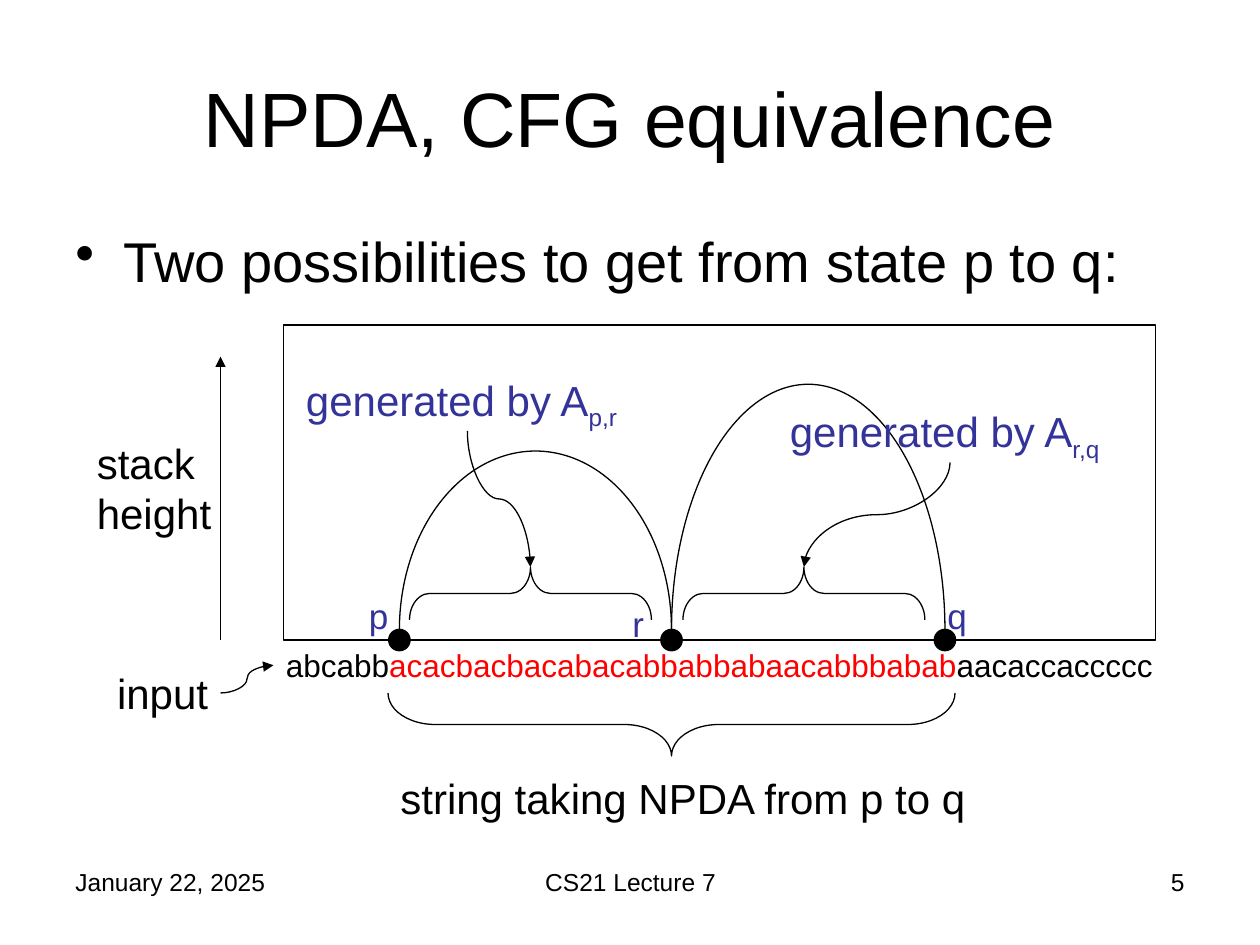
"""Build a slide on the equivalence of NPDAs and CFGs."""
from dataclasses import dataclass

from lxml import etree
from pptx import Presentation
from pptx.dml.color import RGBColor
from pptx.enum.shapes import MSO_CONNECTOR, MSO_SHAPE
from pptx.enum.text import MSO_ANCHOR, PP_ALIGN
from pptx.oxml.ns import qn
from pptx.util import Inches, Pt

STRAIGHT, CURVE = MSO_CONNECTOR.STRAIGHT, MSO_CONNECTOR.CURVE
RECTANGLE, OVAL = MSO_SHAPE.RECTANGLE, MSO_SHAPE.OVAL
ARC, BRACE = MSO_SHAPE.ARC, MSO_SHAPE.LEFT_BRACE
LEFT, CENTER, RIGHT = PP_ALIGN.LEFT, PP_ALIGN.CENTER, PP_ALIGN.RIGHT
TOP, MIDDLE = MSO_ANCHOR.TOP, MSO_ANCHOR.MIDDLE


@dataclass(frozen=True)
class Theme:
    """Colours, font and type sizes."""
    ink: RGBColor = RGBColor(0, 0, 0)
    accent: RGBColor = RGBColor(0x33, 0x33, 0x99)
    highlight: RGBColor = RGBColor(0xFF, 0, 0)
    font: str = "Arial"
    title: int = 44
    body: int = 32
    label: int = 24
    state: int = 20
    string: int = 18
    footer: int = 14
    line: float = 0.75


THEME = Theme()


@dataclass(frozen=True)
class Run:
    """A stretch of text with one look."""
    text: str
    color: RGBColor = THEME.ink
    subscript: bool = False


@dataclass(frozen=True)
class Label:
    """A text box in inches."""
    box: tuple[float, float, float, float]
    size: int
    runs: tuple[Run, ...]
    align: PP_ALIGN = LEFT
    anchor: MSO_ANCHOR = TOP
    bullet: bool = False


@dataclass(frozen=True)
class Outline:
    """A preset shape in inches."""
    kind: MSO_SHAPE
    box: tuple[float, float, float, float]
    filled: bool = False
    rotation: float = 0
    adjustments: tuple[float, ...] = ()


@dataclass(frozen=True)
class Arrow:
    """An arrow between two points; an upright curve leaves vertically."""
    start: tuple[float, float]
    end: tuple[float, float]
    kind: MSO_CONNECTOR = CURVE
    upright: bool = False


BASELINE = 5.08
STATES = (3.17, 5.33, 7.5)
DOT = 0.17
ARC_HEIGHTS = (1.42, 1.95)
FOOTER_TOP, FOOTER_HEIGHT = 6.83, 0.52


def generated_by(left: float, top: float, pair: str) -> Label:
    """Describe the label naming the variable that generates a segment."""
    runs = (Run("generated by A", THEME.accent), Run(pair, THEME.accent, True))
    return Label((left, top, 2.75, 0.5), THEME.label, runs)


def state(left: float, top: float, name: str) -> Label:
    """Describe the label of a state."""
    return Label((left, top, 0.42, 0.43), THEME.state, (Run(name, THEME.accent),))


def upright_brace(center: float, middle: float, width: float, height: float,
                  rotation: float, curl: float) -> Outline:
    """Describe a brace turned to lie along the input."""
    box = (center - height / 2, middle - width / 2, height, width)
    return Outline(BRACE, box, rotation=rotation, adjustments=(curl, 0.5))


LABELS = (
    Label((0.5, FOOTER_TOP, 2.33, FOOTER_HEIGHT), THEME.footer, (Run("January 22, 2025"),)),
    Label((3.42, FOOTER_TOP, 3.17, FOOTER_HEIGHT), THEME.footer,
          (Run("CS21 Lecture 7"),), CENTER),
    Label((7.17, FOOTER_TOP, 2.33, FOOTER_HEIGHT), THEME.footer, (Run("5"),), RIGHT),
    Label((0.5, 0.3, 9, 1.25), THEME.title, (Run("NPDA, CFG equivalence"),), CENTER, MIDDLE),
    Label((0.5, 1.75, 9, 0.75), THEME.body,
          (Run("Two possibilities to get from state p to q:"),), bullet=True),
    Label((0.67, 3.42, 1.33, 0.9), THEME.label, (Run("stack height"),)),
    Label((2.17, BASELINE, 7.25, 0.4), THEME.string,
          (Run("abcabb"), Run("acacbacbacabacabbabbabaacabbbabab", THEME.highlight),
           Run("aacaccaccccc"))),
    Label((0.75, 5.25, 1, 0.5), THEME.label, (Run("input"),), RIGHT),
    Label((3.08, 6.08, 4.83, 0.5), THEME.label, (Run("string taking NPDA from p to q"),)),
    state(2.83, 4.67, "p"),
    state(7.42, 4.67, "q"),
    state(4.92, 4.73, "r"),
    generated_by(2.33, 2.92, "p,r"),
    generated_by(6.17, 3.17, "r,q"),
)

OUTLINES = (
    Outline(RECTANGLE, (2.25, 2.58, 6.92, 2.5)),
    upright_brace(STATES[1], 5.75, 4.5, 0.5, 270, 0.75),
    *(Outline(OVAL, (x - DOT / 2, BASELINE - DOT / 2, DOT, DOT), True) for x in STATES),
    *(Outline(ARC, (x, 5 - height, end - x, 2 * height), adjustments=(108, 0))
      for x, end, height in zip(STATES, STATES[1:], ARC_HEIGHTS)),
    *(upright_brace(center, 4.71, 1.92, 0.42, 90, 0.38) for center in (4.21, 6.38)),
)

ARROWS = (
    Arrow((1.75, BASELINE), (1.75, 2.83), STRAIGHT),
    Arrow((1.75, 5.5), (2.17, 5.28)),
    Arrow((3.71, 3.42), (4.21, 4.5), upright=True),
    Arrow((7.54, 3.67), (6.38, 4.5), upright=True),
)


def apply_format(target: object, values: dict[str, object]) -> None:
    """Set each named attribute on the target."""
    for name, value in values.items():
        setattr(target, name, value)


def draw_label(slide, label: Label) -> None:
    """Add a text box with its runs."""
    frame = slide.shapes.add_textbox(*map(Inches, label.box)).text_frame
    apply_format(frame, {"word_wrap": True, "vertical_anchor": label.anchor})
    paragraph = frame.paragraphs[0]
    paragraph.alignment = label.align
    if label.bullet:
        properties = paragraph._p.get_or_add_pPr()
        properties.set("marL", str(Inches(0.38)))
        properties.set("indent", str(Inches(-0.38)))
        etree.SubElement(properties, qn("a:buChar"), char="•")
    for piece in label.runs:
        run = paragraph.add_run()
        run.text = piece.text
        apply_format(run.font, {"name": THEME.font, "size": Pt(label.size)})
        run.font.color.rgb = piece.color
        if piece.subscript:
            run._r.get_or_add_rPr().set("baseline", "-25000")


def draw_line_format(line) -> None:
    """Give a line the common colour and width."""
    line.color.rgb = THEME.ink
    line.width = Pt(THEME.line)


def draw_outline(slide, outline: Outline) -> None:
    """Add a preset shape."""
    shape = slide.shapes.add_shape(outline.kind, *map(Inches, outline.box))
    shape.shadow.inherit = False
    shape.rotation = outline.rotation
    for index, value in enumerate(outline.adjustments):
        shape.adjustments[index] = value
    if outline.filled:
        shape.fill.solid()
        shape.fill.fore_color.rgb = THEME.ink
    else:
        shape.fill.background()
    draw_line_format(shape.line)


def draw_arrow(slide, arrow: Arrow) -> None:
    """Add a connector with an arrowhead at its end."""
    (x1, y1), (x2, y2) = arrow.start, arrow.end
    rightward = x2 > x1
    if arrow.upright:
        center, middle = (x1 + x2) / 2, (y1 + y2) / 2
        across, down = abs(x2 - x1) / 2, (y2 - y1) / 2
        reach = down if rightward else -down
        x1, y1, x2, y2 = center + reach, middle - across, center - reach, middle + across
    connector = slide.shapes.add_connector(arrow.kind, *map(Inches, (x1, y1, x2, y2)))
    draw_line_format(connector.line)
    properties = connector._element.spPr
    if arrow.upright:
        properties.find(qn("a:xfrm")).set("rot", str((270 if rightward else 90) * 60000))
    etree.SubElement(properties.find(qn("a:ln")), qn("a:tailEnd"), type="triangle")
    etree.SubElement(properties, qn("a:effectLst"))


def main() -> None:
    """Build and save the presentation."""
    presentation = Presentation()
    apply_format(presentation, {"slide_width": Inches(10), "slide_height": Inches(7.5)})
    slide = presentation.slides.add_slide(presentation.slide_layouts[6])
    for draw, items in ((draw_outline, OUTLINES), (draw_arrow, ARROWS), (draw_label, LABELS)):
        for item in items:
            draw(slide, item)
    presentation.save("out.pptx")


if __name__ == "__main__":
    main()
